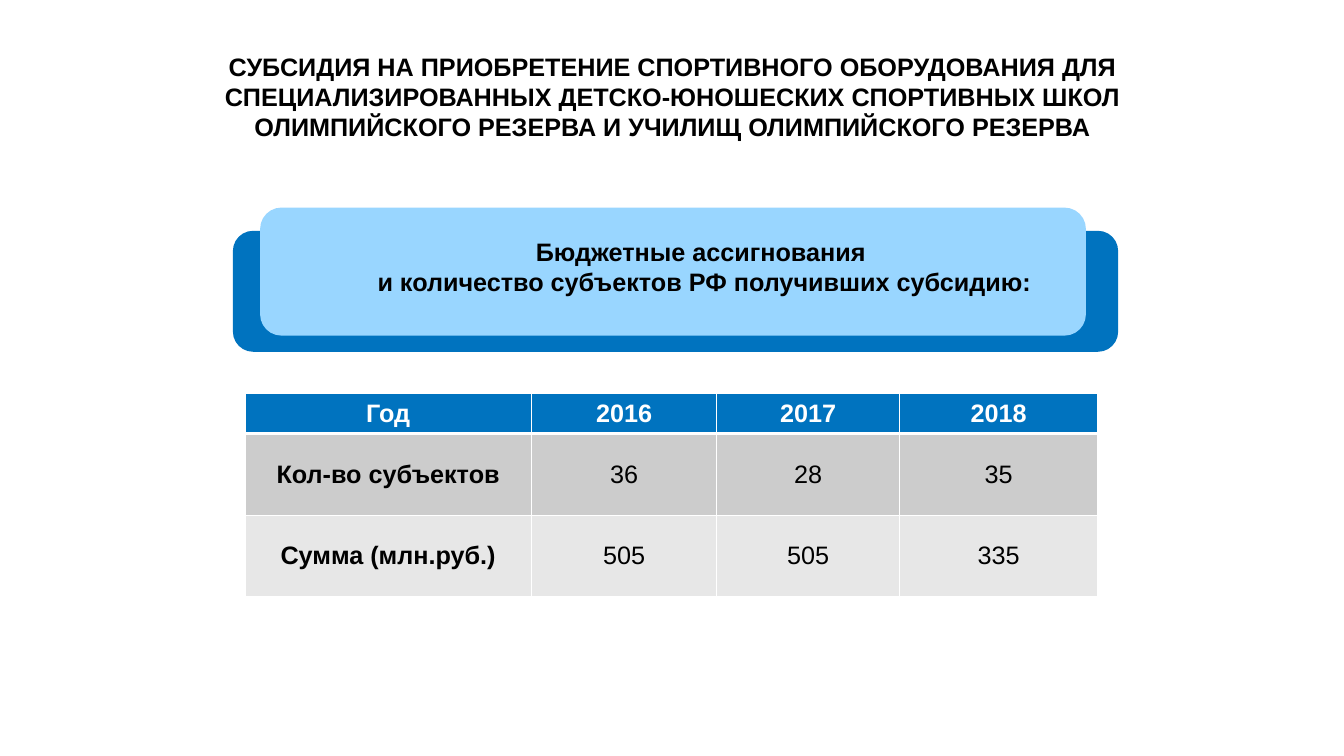
from lxml import etree
from pptx import Presentation
from pptx.dml.color import RGBColor
from pptx.enum.shapes import MSO_SHAPE
from pptx.enum.text import MSO_ANCHOR, PP_ALIGN
from pptx.oxml.ns import qn
from pptx.util import Inches, Pt

CENTER = PP_ALIGN.CENTER
MIDDLE = MSO_ANCHOR.MIDDLE
PANEL = MSO_SHAPE.FLOWCHART_ALTERNATE_PROCESS

FONT = "Arial"
COLORS = {
    "blue": "0073BF",
    "sky": "99D6FF",
    "black": "000000",
    "white": "FFFFFF",
    "grey": "CCCCCC",
    "light": "E7E7E7",
}

TITLE = ("СУБСИДИЯ НА ПРИОБРЕТЕНИЕ СПОРТИВНОГО ОБОРУДОВАНИЯ ДЛЯ "
         "СПЕЦИАЛИЗИРОВАННЫХ ДЕТСКО-ЮНОШЕСКИХ СПОРТИВНЫХ ШКОЛ "
         "ОЛИМПИЙСКОГО РЕЗЕРВА И УЧИЛИЩ ОЛИМПИЙСКОГО РЕЗЕРВА")
SUBTITLE = "Бюджетные ассигнования \nи количество субъектов РФ получивших субсидию:"
ROWS = [
    ["Год", "2016", "2017", "2018"],
    ["Кол-во субъектов", "36", "28", "35"],
    ["Сумма (млн.руб.)", "505", "505", "335"],
]
ROW_FILLS = ["blue", "grey", "light"]
COL_WIDTHS = [2.84, 1.84, 1.81, 1.97]
ROW_HEIGHTS = [0.4, 0.81, 0.81]


def rgb(name):
    return RGBColor.from_string(COLORS[name])


def style_text(tf, color="black", bold=True):
    for p in tf.paragraphs:
        p.alignment = CENTER
        for r in p.runs:
            r.font.name = FONT
            r.font.size = Pt(18)
            r.font.bold = bold
            r.font.color.rgb = rgb(color)


def add_panel(s, x, y, w, h, color):
    sp = s.shapes.add_shape(PANEL, Inches(x), Inches(y), Inches(w), Inches(h))
    sp.shadow.inherit = False
    sp.fill.solid()
    sp.fill.fore_color.rgb = rgb(color)
    sp.line.fill.background()


def add_text(s, x, y, w, h, text):
    tf = s.shapes.add_textbox(Inches(x), Inches(y), Inches(w), Inches(h)).text_frame
    tf.word_wrap = True
    tf.text = text
    style_text(tf)


def set_borders(cell, widths):
    tcPr = cell._tc.get_or_add_tcPr()
    for side, width in zip("LRTB", widths):
        ln = etree.SubElement(tcPr, qn(f"a:ln{side}"), w=str(Pt(width)))
        fill = etree.SubElement(ln, qn("a:solidFill"))
        etree.SubElement(fill, qn("a:srgbClr"), val=COLORS["white"])


def add_subsidy_table(s, x, y):
    table = s.shapes.add_table(
        len(ROWS), len(COL_WIDTHS), Inches(x), Inches(y),
        Inches(sum(COL_WIDTHS)), Inches(sum(ROW_HEIGHTS))).table
    for col, width in zip(table.columns, COL_WIDTHS):
        col.width = Inches(width)
    for i, values in enumerate(ROWS):
        table.rows[i].height = Inches(ROW_HEIGHTS[i])
        header = i == 0
        for j, value in enumerate(values):
            cell = table.cell(i, j)
            cell.text = value
            cell.vertical_anchor = MIDDLE
            # The rule under the header is thicker
            set_borders(cell, (1, 1, 3 if i == 1 else 1, 3 if header else 1))
            cell.fill.solid()
            cell.fill.fore_color.rgb = rgb(ROW_FILLS[i])
            style_text(cell.text_frame, "white" if header else "black",
                       header or j == 0)


def main():
    prs = Presentation()
    prs.slide_width, prs.slide_height = Inches(13.33), Inches(7.5)
    s = prs.slides.add_slide(prs.slide_layouts[6])

    # Layered panels behind the subtitle
    add_panel(s, 2.31, 2.29, 8.78, 1.2, "blue")
    add_panel(s, 2.58, 2.06, 8.19, 1.27, "sky")

    # Title and subtitle
    add_text(s, 1.21, 0.46, 10.92, 1.01, TITLE)
    add_text(s, 1.01, 2.29, 11.95, 0.71, SUBTITLE)

    # Figures by year
    add_subsidy_table(s, 2.43, 3.9)

    prs.save("out.pptx")


if __name__ == "__main__":
    main()
